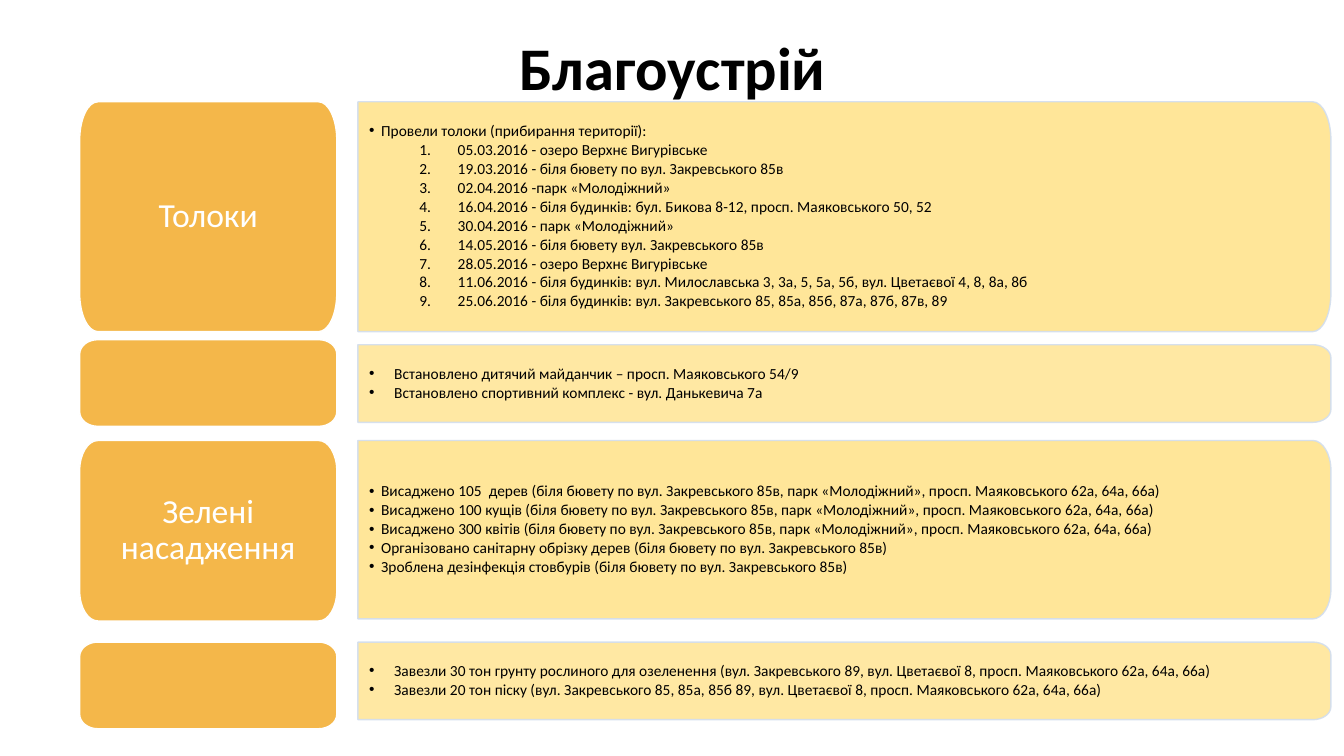
from dataclasses import dataclass

import pptx
import pptx.dml.color
import pptx.enum.text
import pptx.oxml
import pptx.oxml.ns
import pptx.util
from pptx.shapes.autoshape import Shape
from pptx.slide import Slide
from pptx.text.text import _Paragraph

Inches = pptx.util.Inches
Pt = pptx.util.Pt
RGBColor = pptx.dml.color.RGBColor
PP_ALIGN = pptx.enum.text.PP_ALIGN
MSO_ANCHOR = pptx.enum.text.MSO_ANCHOR
qn = pptx.oxml.ns.qn

BLACK = RGBColor(0x00, 0x00, 0x00)
WHITE = RGBColor(0xFF, 0xFF, 0xFF)
ORANGE = RGBColor(0xF4, 0xB7, 0x4A)
CREAM = RGBColor(0xFF, 0xE6, 0x99)
PALE_BLUE = RGBColor(0xD2, 0xDE, 0xEF)

FONT = "Calibri"
NAMESPACE = pptx.oxml.ns.nsdecls("a")
LABEL_LEFT, LABEL_WIDTH = 0.79, 2.55
PANEL_LEFT, PANEL_WIDTH = 3.55, 9.65
CORNER_WIDTH = 0.18
CURVE_PULL = 0.55


@dataclass(frozen=True)
class Span:
    top: float
    height: float


@dataclass(frozen=True)
class Topic:
    label: str
    label_span: Span
    panel_span: Span
    bullets: tuple[str, ...]
    bullet_indent: float
    opacity: int = 100
    numbered: tuple[str, ...] = ()


TOPICS = (
    Topic(
        "Толоки", Span(1.01, 2.28), Span(1.01, 2.28),
        ("Провели толоки (прибирання території):",), 0.12,
        numbered=(
            "05.03.2016 - озеро Верхнє Вигурівське",
            "19.03.2016 - біля бювету по вул. Закревського 85в",
            "02.04.2016 -парк «Молодіжний»",
            "16.04.2016 - біля будинків: бул. Бикова 8-12, просп. Маяковського 50, 52",
            "30.04.2016 - парк «Молодіжний»",
            "14.05.2016 - біля бювету вул. Закревського 85в",
            "28.05.2016 - озеро Верхнє Вигурівське",
            "11.06.2016 - біля будинків: вул. Милославська 3, 3а, 5, 5а, 5б, вул. Цветаєвої 4, 8, 8а, 8б",
            "25.06.2016 - біля будинків: вул. Закревського 85, 85а, 85б, 87а, 87б, 87в, 89",
        ),
    ),
    Topic(
        "Зелені насадження", Span(4.37, 1.79), Span(4.37, 1.77),
        (
            "Висаджено 105  дерев (біля бювету по вул. Закревського 85в, парк «Молодіжний», просп. Маяковського 62а, 64а, 66а)",
            "Висаджено 100 кущів (біля бювету по вул. Закревського 85в, парк «Молодіжний», просп. Маяковського 62а, 64а, 66а)",
            "Висаджено 300 квітів (біля бювету по вул. Закревського 85в, парк «Молодіжний», просп. Маяковського 62а, 64а, 66а)",
            "Організовано санітарну обрізку дерев (біля бювету по вул. Закревського 85в)",
            "Зроблена дезінфекція стовбурів (біля бювету по вул. Закревського 85в)",
        ), 0.12,
    ),
    Topic(
        "", Span(6.37, 0.86), Span(6.37, 0.77),
        (
            "Завезли 30 тон грунту рослиного для озеленення (вул. Закревського 89, вул. Цветаєвої 8, просп. Маяковського 62а, 64а, 66а)",
            "Завезли 20 тон піску (вул. Закревського 85, 85а, 85б 89, вул. Цветаєвої 8, просп. Маяковського 62а, 64а, 66а)",
        ), 0.25, opacity=90,
    ),
    Topic(
        "", Span(3.37, 0.86), Span(3.42, 0.77),
        (
            "Встановлено дитячий майданчик – просп. Маяковського 54/9",
            "Встановлено спортивний комплекс - вул. Данькевича 7а",
        ), 0.25, opacity=90,
    ),
)


def set_opacity(fill: pptx.dml.fill.FillFormat, percent: int) -> None:
    color = fill._xPr.find(qn("a:solidFill"))[0]
    color.append(pptx.oxml.parse_xml(f'<a:alpha {NAMESPACE} val="{percent * 1000}"/>'))


def round_corners(card: Shape, count: int) -> None:
    outline = card._element.find(".//" + qn("a:path"))
    points = [(int(p.get("x")), int(p.get("y"))) for p in outline.iter(qn("a:pt"))]
    segments = outline.findall(qn("a:lnTo"))
    for corner in range(count):
        start, end = points[2 * corner], points[2 * corner + 1]
        tip = (end[0], start[1]) if corner % 2 == 0 else (start[0], end[1])
        controls = [
            tuple(round(a + CURVE_PULL * (b - a)) for a, b in zip(anchor, tip))
            for anchor in (start, end)
        ]
        marks = "".join(f'<a:pt x="{x}" y="{y}"/>' for x, y in (*controls, end))
        curve = pptx.oxml.parse_xml(f"<a:cubicBezTo {NAMESPACE}>{marks}</a:cubicBezTo>")
        outline.replace(segments[2 * corner], curve)


def draw_card(slide: Slide, left: float, width: float, span: Span, round_left: bool,
              fill: RGBColor, line: RGBColor) -> Shape:
    top, right, bottom = span.top, left + width, span.top + span.height
    rx, ry = CORNER_WIDTH, span.height / 6
    points = [(right - rx, top), (right, top + ry), (right, bottom - ry), (right - rx, bottom)]
    if round_left:
        points += [(left + rx, bottom), (left, bottom - ry), (left, top + ry), (left + rx, top)]
    else:
        points += [(left, bottom), (left, top)]
    first, *rest = [(Inches(x), Inches(y)) for x, y in points]
    builder = slide.shapes.build_freeform(*first)
    builder.add_line_segments(rest, close=True)
    card = builder.convert_to_shape()
    round_corners(card, 4 if round_left else 2)
    card.shadow.inherit = False
    card.fill.solid()
    card.fill.fore_color.rgb = fill
    card.line.color.rgb = line
    card.line.width = Pt(1)
    return card


def set_insets(card: Shape, left: float, right: float, vertical: float) -> None:
    frame = card.text_frame
    frame.word_wrap = True
    frame.vertical_anchor = MSO_ANCHOR.MIDDLE
    frame.margin_left, frame.margin_right = Inches(left), Inches(right)
    frame.margin_top = frame.margin_bottom = Inches(vertical)


def format_paragraph(paragraph: _Paragraph, size: float, color: RGBColor,
                     align: PP_ALIGN, bold: bool = False) -> None:
    paragraph.alignment = align
    paragraph.line_spacing = 0.9
    paragraph.font.name = FONT
    paragraph.font.size = Pt(size)
    paragraph.font.bold = bold
    paragraph.font.color.rgb = color


def add_marker(paragraph: _Paragraph, margin: float, hanging: float, marker: str) -> None:
    properties = paragraph._p.get_or_add_pPr()
    properties.set("marL", str(Inches(margin)))
    properties.set("indent", str(-Inches(hanging)))
    typeface = "Arial" if "buChar" in marker else "+mj-lt"
    for tag in (f'buFont typeface="{typeface}"', marker):
        properties.append(pptx.oxml.parse_xml(f"<a:{tag} {NAMESPACE}/>"))


def draw_panel(slide: Slide, topic: Topic) -> None:
    panel = draw_card(slide, PANEL_LEFT, PANEL_WIDTH, topic.panel_span, False, CREAM, PALE_BLUE)
    set_opacity(panel.line.fill, 90)
    if topic.opacity < 100:
        set_opacity(panel.fill, topic.opacity)
    set_insets(panel, 0.11, 0.17, 0.11)
    entries = [(text, 0, topic.bullet_indent, topic.bullet_indent, 'buChar char="•"')
               for text in topic.bullets]
    entries += [(text, 1, 0.88, 0.38, 'buAutoNum type="arabicPeriod"') for text in topic.numbered]
    frame = panel.text_frame
    for index, (text, level, margin, hanging, marker) in enumerate(entries):
        paragraph = frame.add_paragraph() if index else frame.paragraphs[0]
        paragraph.text = text
        paragraph.level = level + 1
        paragraph.line_spacing = 0.9
        paragraph.space_after = Pt(1.65)
        add_marker(paragraph, margin, hanging, marker)
        format_paragraph(paragraph, 11, BLACK, PP_ALIGN.LEFT)


def draw_label(slide: Slide, topic: Topic) -> None:
    label = draw_card(slide, LABEL_LEFT, LABEL_WIDTH, topic.label_span, True, ORANGE, WHITE)
    if topic.label:
        set_insets(label, 0.14, 0.14, 0.1)
        label.text_frame.text = topic.label
        format_paragraph(label.text_frame.paragraphs[0], 24, WHITE, PP_ALIGN.CENTER)


def main() -> None:
    deck = pptx.Presentation()
    deck.slide_width, deck.slide_height = Inches(13.33), Inches(7.5)
    slide = deck.slides.add_slide(deck.slide_layouts[5])
    title = slide.shapes.title
    title.left, title.top, title.width, title.height = map(Inches, (0.92, 0.4, 11.5, 0.61))
    title.text_frame.text = "Благоустрій"
    title.text_frame.auto_size = pptx.enum.text.MSO_AUTO_SIZE.NONE
    title.text_frame.vertical_anchor = MSO_ANCHOR.MIDDLE
    format_paragraph(title.text_frame.paragraphs[0], 43.2, BLACK, PP_ALIGN.CENTER, bold=True)
    for topic in TOPICS:
        steps = (draw_panel, draw_label) if topic.label else (draw_label, draw_panel)
        for draw in steps:
            draw(slide, topic)
    deck.save("out.pptx")


if __name__ == "__main__":
    main()
